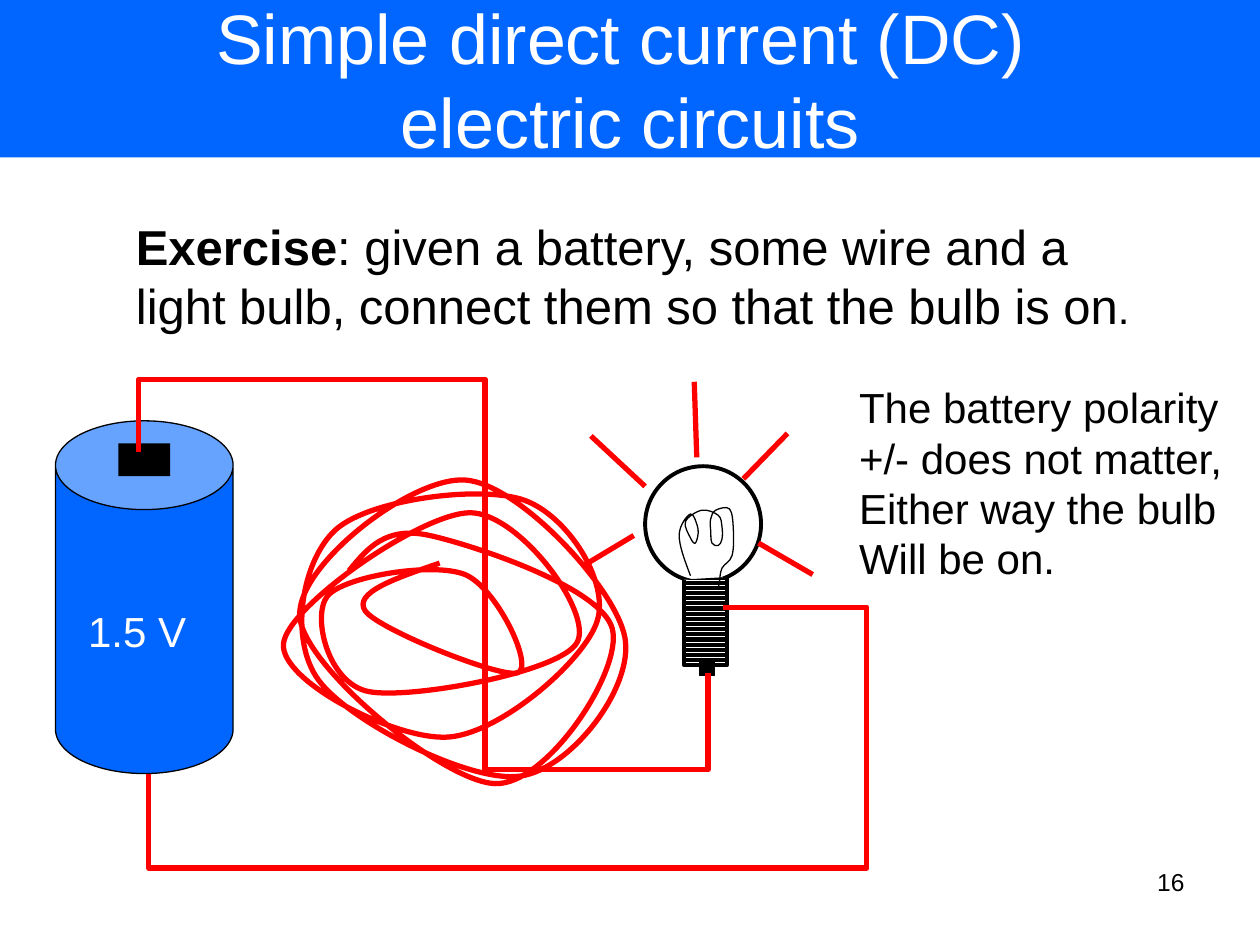
from pptx import Presentation
from pptx.dml.color import RGBColor
from pptx.enum.dml import MSO_PATTERN
from pptx.enum.shapes import MSO_CONNECTOR, MSO_SHAPE
from pptx.enum.text import MSO_ANCHOR, MSO_AUTO_SIZE, PP_ALIGN
from pptx.oxml.xmlchemy import OxmlElement
from pptx.util import Inches, Pt

W, H = 10, 7.5
COLORS = {"blue": "0066FF", "red": "FF0000", "black": "000000", "white": "FFFFFF"}
TITLE = "Simple direct current (DC) \velectric circuits"
EXERCISE = [
    [("Exercise", {"size": 28, "bold": True}),
     (": given a battery, some wire and a", {"size": 28})],
    [("light bulb, connect them so that the bulb is on", {"size": 28}),
     (".", {"size": 24})],
]
POLARITY = [[(line, {"size": 24})] for line in (
    "The battery polarity", "+/- does not matter,",
    "Either way the bulb", "Will be on.")]
VOLTAGE = [[("1.5 V", {"size": 24, "color": "white"})]]
NUMBER = [[("16", {"size": 14})]]

COIL = [(3.49, 4.47), (2.9, 4.85), (4.11, 5.34), (3.69, 4.56), (2.6, 4.73),
        (2.93, 5.49), (4.58, 5.1), (3.73, 4.07), (2.25, 5.11), (3.56, 5.85),
        (4.74, 4.93), (4.16, 3.97), (2.67, 4.2), (2.53, 5.4), (4.13, 6.16),
        (4.96, 5.06), (3.69, 3.81), (2.38, 4.9), (3.93, 6.22), (4.86, 4.99),
        (3.41, 4.25), (2.77, 4.53)]
FILAMENT = [(5.48, 4.57), (5.39, 4.25), (5.48, 4.08), (5.54, 4.2), (5.52, 4.31),
            (5.48, 4.27), (5.44, 4.14), (5.57, 4.05), (5.7, 4.09), (5.73, 4.18),
            (5.73, 4.28), (5.7, 4.33), (5.65, 4.31), (5.64, 4.21), (5.64, 4.12),
            (5.68, 4.05), (5.79, 4.04), (5.82, 4.2), (5.81, 4.41), (5.73, 4.51),
            (5.71, 4.62), (5.7, 4.67)]
SCREW = [(5.43, 4.6), (5.43, 5.28), (5.77, 5.28), (5.77, 4.58)]
WIRES = [
    [(1.18, 6.14), (1.18, 6.89), (6.88, 6.89), (6.88, 4.82), (5.74, 4.82)],
    [(1.1, 3.59), (1.1, 3.01), (3.85, 3.01), (3.85, 6.11), (5.62, 6.11), (5.62, 5.34)],
]
RAYS = [((5.03, 4.25), (4.63, 4.49)), ((5.12, 3.86), (4.69, 3.46)),
        ((5.53, 3.63), (5.51, 3.03)), ((5.9, 3.8), (6.25, 3.44)),
        ((6.02, 4.31), (6.45, 4.56))]


def rgb(name):
    return RGBColor.from_string(COLORS[name])


def box(*lengths):
    return [Inches(v) for v in lengths]


def style(sp, fill=None, line=None, width=0.75):
    sp.shadow.inherit = False
    if fill:
        sp.fill.solid()
        sp.fill.fore_color.rgb = rgb(fill)
    else:
        sp.fill.background()
    if line:
        sp.line.color.rgb = rgb(line)
        sp.line.width = Pt(width)
    else:
        sp.line.fill.background()
    return sp


def set_font(font, size, color="black", bold=False):
    values = {"name": "Arial", "size": Pt(size), "bold": bold}
    for key, value in values.items():
        setattr(font, key, value)
    font.color.rgb = rgb(color)


def add_text(shapes, at, lines, wrap=False, align=PP_ALIGN.LEFT):
    tf = shapes.add_textbox(*box(*at)).text_frame
    tf.word_wrap = wrap
    tf.auto_size = MSO_AUTO_SIZE.NONE if wrap else MSO_AUTO_SIZE.SHAPE_TO_FIT_TEXT
    for i, line in enumerate(lines):
        p = tf.add_paragraph() if i else tf.paragraphs[0]
        p.alignment = align
        for text, fmt in line:
            r = p.add_run()
            r.text = text
            set_font(r.font, **fmt)


def add_outline(shapes, points, **look):
    pts = [(x * 1000, y * 1000) for x, y in points]
    fb = shapes.build_freeform(*pts[0], scale=914.4)
    fb.add_line_segments(pts[1:], close=False)
    return style(fb.convert_to_shape(), **look)


def midpoint(a, b):
    return (a[0] + b[0]) / 2, (a[1] + b[1]) / 2


def bezier_points(knots):
    last = len(knots) - 1
    slopes = [tuple((b - a) / 6 for a, b in zip(knots[max(i - 1, 0)], knots[min(i + 1, last)]))
              for i in range(last + 1)]
    points = [knots[0]]
    for i in range(last):
        (x0, y0), (x1, y1) = knots[i:i + 2]
        c1 = x0 + slopes[i][0], y0 + slopes[i][1]
        c2 = x1 - slopes[i + 1][0], y1 - slopes[i + 1][1]
        if i == 0:
            c1 = midpoint(knots[0], c2)
        if i == last - 1:
            c2 = midpoint(c1, knots[last])
        points += [c1, c2, knots[i + 1]]
    return points


def add_curve(shapes, knots, **look):
    sp = add_outline(shapes, bezier_points(knots), **look)
    outline = sp._element.xpath(".//a:path")[0]
    segments = outline.xpath("./a:lnTo")
    for i in range(0, len(segments), 3):
        curve = OxmlElement("a:cubicBezTo")
        for segment in segments[i:i + 3]:
            curve.append(segment[0])
            outline.remove(segment)
        outline.append(curve)


def add_title(s):
    sp = s.shapes.title
    sp.left, sp.top, sp.width, sp.height = box(0, 0, W, H / 6)
    sp.fill.solid()
    sp.fill.fore_color.rgb = rgb("blue")
    tf = sp.text_frame
    tf.text = TITLE
    for key, value in {"word_wrap": True, "auto_size": MSO_AUTO_SIZE.NONE,
                       "vertical_anchor": MSO_ANCHOR.MIDDLE}.items():
        setattr(tf, key, value)
    p = tf.paragraphs[0]
    p.alignment = PP_ALIGN.CENTER
    for r in p.runs:
        set_font(r.font, 40, "white")


def add_battery(shapes):
    can = shapes.add_shape(MSO_SHAPE.CAN, *box(0.44, 3.34, 1.41, 2.8))
    can.adjustments[0] = 0.5
    style(can, "blue", "black")
    add_text(shapes, (0.6, 4.76, 0.98, 0.5), VOLTAGE)
    style(shapes.add_shape(MSO_SHAPE.RECTANGLE, *box(0.94, 3.52, 0.41, 0.26)), "black")


def add_bulb(shapes):
    style(shapes.add_shape(MSO_SHAPE.OVAL, *box(5.12, 3.7, 0.92, 0.92)), "white", "black", 2.25)
    screw = add_outline(shapes, SCREW, line="black", width=2.25)
    screw.fill.patterned()
    screw.fill.pattern = MSO_PATTERN.DARK_HORIZONTAL
    screw.fill.fore_color.rgb = rgb("black")
    screw.fill.back_color.rgb = rgb("white")
    style(shapes.add_shape(MSO_SHAPE.RECTANGLE, *box(5.55, 5.24, 0.12, 0.12)), "black", "black")
    add_curve(shapes, FILAMENT, line="black")


def add_rays(shapes):
    for start, end in RAYS:
        ray = shapes.add_connector(MSO_CONNECTOR.STRAIGHT, *box(*start, *end))
        ray.line.color.rgb = rgb("red")
        ray.line.width = Pt(3)
        ray._element.spPr.append(OxmlElement("a:effectLst"))


def main():
    prs = Presentation()
    prs.slide_width, prs.slide_height = box(W, H)
    s = prs.slides.add_slide(prs.slide_layouts[5])
    add_title(s)
    add_battery(s.shapes.add_group_shape().shapes)
    add_text(s.shapes, (0.98, 1.67, 8.11, 1.03), EXERCISE)
    add_bulb(s.shapes.add_group_shape().shapes)
    add_curve(s.shapes, COIL, line="red", width=3)
    for wire in WIRES:
        add_outline(s.shapes, wire, line="red", width=3)
    add_text(s.shapes, (6.72, 2.98, 3.1, 1.7), POLARITY)
    add_rays(s.shapes.add_group_shape().shapes)
    add_text(s.shapes, (7.17, 6.83, 2.33, 0.52), NUMBER, wrap=True, align=PP_ALIGN.RIGHT)
    prs.save("out.pptx")


if __name__ == "__main__":
    main()
